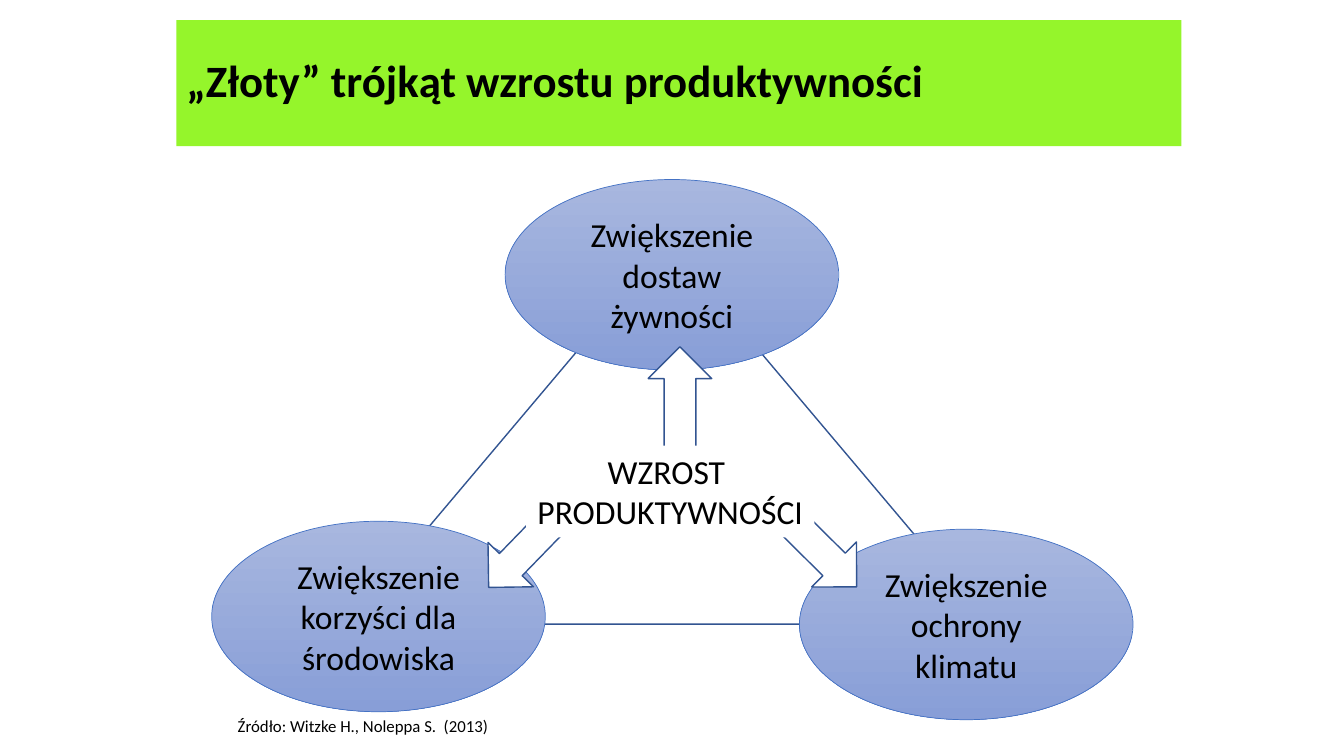
from lxml.etree import SubElement
from pptx import Presentation
from pptx.dml.color import RGBColor
from pptx.enum.shapes import MSO_SHAPE
from pptx.enum.text import MSO_ANCHOR, PP_ALIGN
from pptx.util import Pt

COLORS = {
    "title": "95F52B",
    "oval_top": "A8B7DF",
    "oval_bottom": "889ED7",
    "oval_line": "4472C4",
    "line": "325491",
    "white": "FFFFFF",
    "text": "000000",
}
OVAL_W, OVAL_H = 238.3, 136.1
ARROW_W = 45.4
OVALS = [  # left, top, text
    (209.6, 0, "Zwiększenie dostaw żywności"),
    (0, 244.1, "Zwiększenie korzyści dla środowiska"),
    (419.8, 249.8, "Zwiększenie ochrony klimatu"),
]
ARROWS = [  # left, top, height, rotation
    (311.8, 119.5, 79.2, 180),
    (414, 233.3, 67.7, 314.8),
    (198.7, 233.3, 67.7, 44.2),
]


def rgb(name):
    return RGBColor.from_string(COLORS[name])


def place(s, left, top, width, height):
    box = {"left": left, "top": top, "width": width, "height": height}
    for name, value in box.items():
        setattr(s, name, Pt(value))


def write(tf, lines, size, align=PP_ALIGN.LEFT, bold=False):
    for i, line in enumerate(lines):
        p = tf.paragraphs[0] if i == 0 else tf.add_paragraph()
        p.alignment = align
        r = p.add_run()
        r.text = line
        font = {"name": "Calibri", "size": Pt(size), "bold": bold}
        for name, value in font.items():
            setattr(r.font, name, value)
        r.font.color.rgb = rgb("text")


def add_shape(shapes, kind, box, fill=None, line=None, weight=1):
    s = shapes.add_shape(kind, *map(Pt, box))
    s.shadow.inherit = False
    if fill:
        s.fill.solid()
        s.fill.fore_color.rgb = rgb(fill)
    else:
        s.fill.background()
    if line:
        s.line.color.rgb = rgb(line)
        s.line.width = Pt(weight)
    else:
        s.line.fill.background()
    return s


def add_title(slide, box, text):
    s = slide.shapes.title
    place(s, *box)
    s.fill.solid()
    s.fill.fore_color.rgb = rgb("title")
    tf = s.text_frame
    tf.vertical_anchor = MSO_ANCHOR.MIDDLE
    write(tf, [text], 32, bold=True)
    tf.paragraphs[0].line_spacing = 0.9


def add_oval(shapes, left, top, text):
    s = add_shape(shapes, MSO_SHAPE.OVAL, (left, top, OVAL_W, OVAL_H),
                  line="oval_line", weight=0.5)
    s.fill.gradient()
    s.fill.gradient_angle = 270
    for stop, name in zip(s.fill.gradient_stops, ("oval_top", "oval_bottom")):
        stop.color.rgb = rgb(name)
    tf = s.text_frame
    tf.word_wrap = True
    tf.vertical_anchor = MSO_ANCHOR.MIDDLE
    write(tf, [text], 24, PP_ALIGN.CENTER)


def add_triangle_diagram(slide, left, top):
    shapes = slide.shapes.add_group_shape().shapes
    add_shape(shapes, MSO_SHAPE.ISOSCELES_TRIANGLE,
              (left + 96.5, top + 45.4, 459.4, 272.2), line="line")
    for x, y, text in OVALS:
        add_oval(shapes, left + x, top + y, text)
    for x, y, height, angle in ARROWS:
        s = add_shape(shapes, MSO_SHAPE.DOWN_ARROW,
                      (left + x, top + y, ARROW_W, height), "white", "line")
        s.rotation = angle
    s = add_shape(shapes, MSO_SHAPE.RECTANGLE,
                  (left + 224.6, top + 190.1, 205.9, 65.5), "white")
    tf = s.text_frame
    tf.word_wrap = False
    tf.vertical_anchor = MSO_ANCHOR.TOP
    write(tf, ["WZROST ", "PRODUKTYWNOŚCI"], 24, PP_ALIGN.CENTER)


def add_source(slide, box, text):
    tf = slide.shapes.add_textbox(*map(Pt, box)).text_frame
    tf.word_wrap = True
    write(tf, [text], 12)


def main():
    prs = Presentation()
    prs.slide_width, prs.slide_height = Pt(960), Pt(540)
    slide = prs.slides.add_slide(prs.slide_layouts[5])
    add_title(slide, (126, 14.4, 717.8, 90),
              "„Złoty” trójkąt wzrostu produktywności")
    add_triangle_diagram(slide, 151.2, 128.2)
    add_source(slide, (162.7, 507.6, 572.4, 21.6),
               "Źródło: Witzke H., Noleppa S.  (2013)")
    prs.save("out.pptx")


if __name__ == "__main__":
    main()
